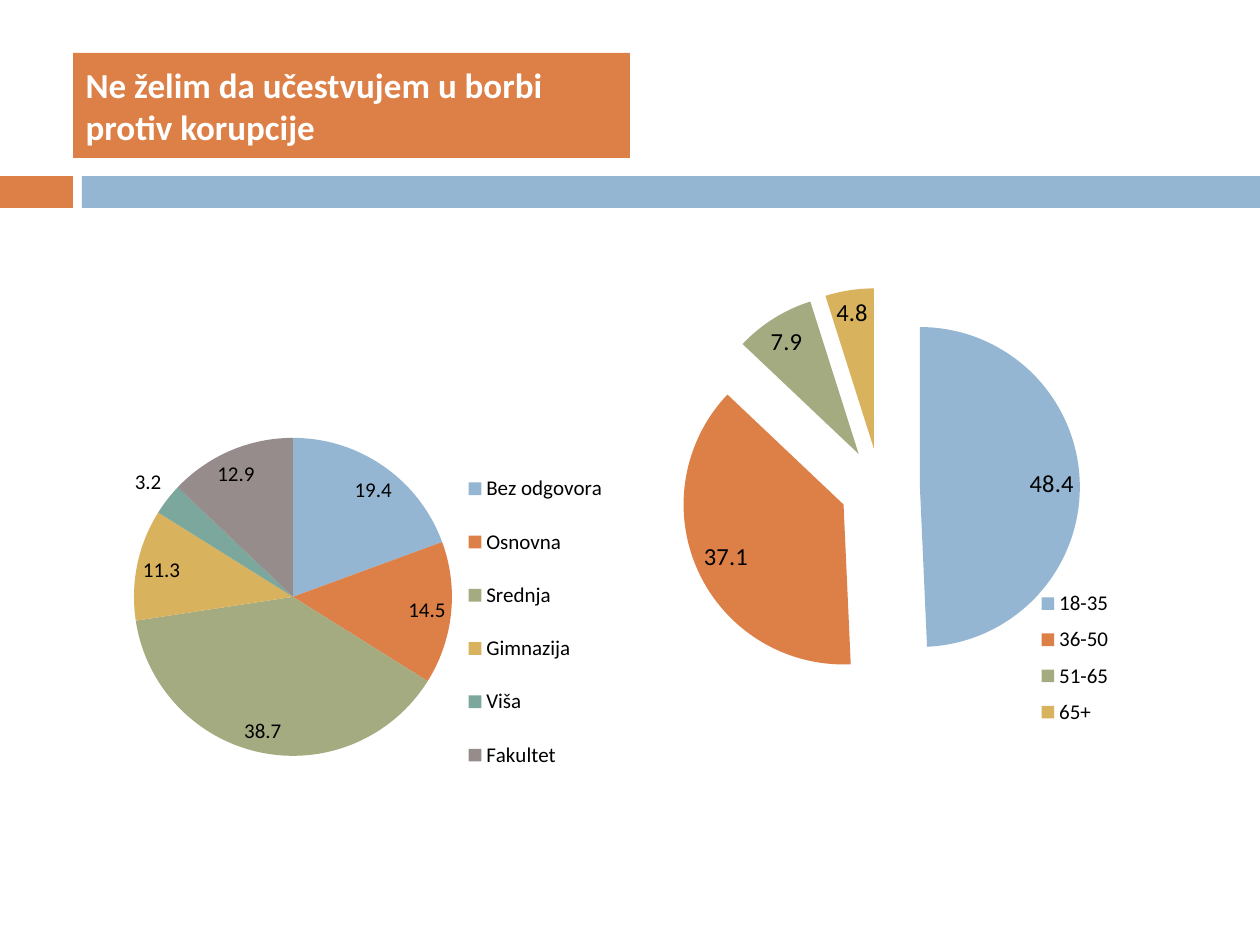
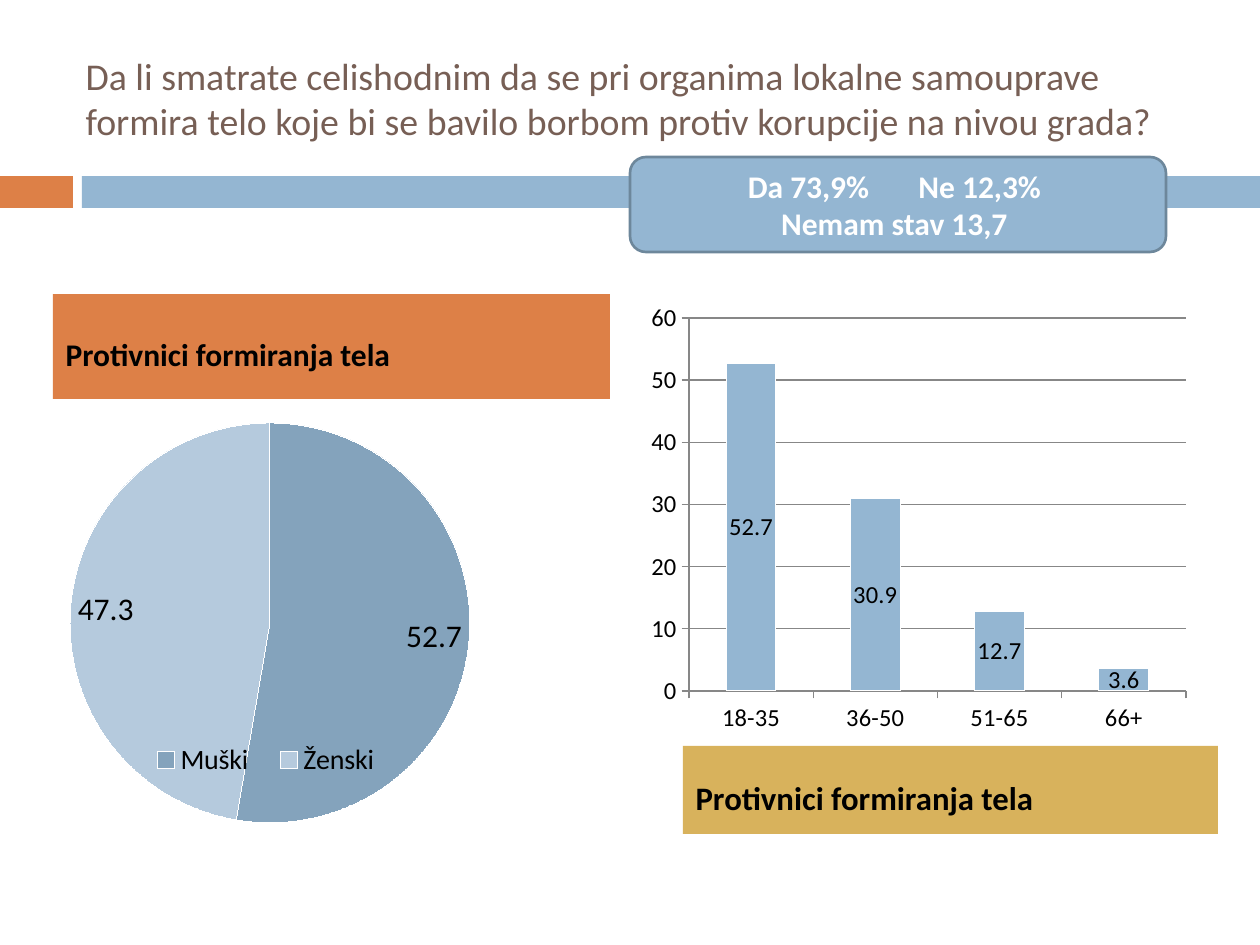
from dataclasses import dataclass
from typing import Any, Optional

from lxml import etree
from pptx import Presentation
from pptx.chart.data import CategoryChartData
from pptx.dml.color import RGBColor
from pptx.enum.chart import XL_CHART_TYPE, XL_LABEL_POSITION, XL_LEGEND_POSITION, XL_TICK_MARK
from pptx.enum.shapes import MSO_SHAPE
from pptx.enum.text import MSO_ANCHOR, MSO_AUTO_SIZE, PP_ALIGN
from pptx.oxml.ns import qn
from pptx.util import Pt

PIE = XL_CHART_TYPE.PIE
COLUMN = XL_CHART_TYPE.COLUMN_STACKED
BEST = XL_LABEL_POSITION.BEST_FIT
CENTER = XL_LABEL_POSITION.CENTER
RIGHT = XL_LEGEND_POSITION.RIGHT
OUTSIDE = XL_TICK_MARK.OUTSIDE
RECT = MSO_SHAPE.RECTANGLE
ROUND = MSO_SHAPE.ROUNDED_RECTANGLE
MIDDLE = MSO_ANCHOR.MIDDLE
NO_FIT = MSO_AUTO_SIZE.NONE
ALIGN_L = PP_ALIGN.LEFT
ALIGN_C = PP_ALIGN.CENTER

SCALE = 914400 / 126
FONT = "Calibri"
WHITE, BLACK, BROWN, GRAY = "FFFFFF", "000000", "775F55", "878787"
BLUE, ORANGE, GREEN, GOLD = "94B6D2", "DD8047", "A5AB81", "D8B25C"
TEAL, MAUVE, EDGE = "7BA79D", "968C8C", "6D879B"
STEEL, PALE = "84A3BC", "B5CADD"
THEME = [BLUE, ORANGE, GREEN, GOLD, TEAL, MAUVE]


@dataclass
class Box:
    x: int
    y: int
    w: int
    h: int


@dataclass
class Graph:
    kind: Any
    box: Box
    plot: Box
    cats: list[str]
    vals: list[float]
    hues: list[str]
    size: int
    key: Optional[Box] = None
    key_size: int = 12
    burst: int = 0
    rim: bool = False


@dataclass
class Label:
    slot: int
    box: Box
    hue: str
    size: float


def px(n: int) -> int:
    return round(n * SCALE)


def rgb(code: str) -> RGBColor:
    return RGBColor.from_string(code)


def paint(shape: Any, hue: str) -> None:
    shape.fill.solid()
    shape.fill.fore_color.rgb = rgb(hue)


def place(shape: Any, box: Box) -> None:
    shape.left, shape.top = px(box.x), px(box.y)
    shape.width, shape.height = px(box.w), px(box.h)


def draw(slide: Any, kind: Any, box: Box, hue: str, edge: str = "") -> Any:
    shape = slide.shapes.add_shape(kind, px(box.x), px(box.y), px(box.w), px(box.h))
    shape.shadow.inherit = False
    paint(shape, hue)
    if edge:
        shape.line.color.rgb = rgb(edge)
        shape.line.width = Pt(1.5)
    else:
        shape.line.fill.background()
    return shape


def write(shape: Any, lines: list[str], *, size: float, hue: str = WHITE, bold: bool = True,
          align: Any = ALIGN_L, before: int = 0, top: int = 6, gap: int = 0) -> None:
    frame = shape.text_frame
    frame.word_wrap = True
    frame.auto_size = NO_FIT
    frame.vertical_anchor = MIDDLE
    frame.margin_top = px(top)
    for i, line in enumerate(lines):
        para = frame.add_paragraph() if i else frame.paragraphs[0]
        para.alignment = align
        para.space_before = Pt(before)
        for j, part in enumerate(line.split("|")):
            if j:
                space = para.add_run()
                space.text = " "
                space.font.size = Pt(size)
                space.font.name = FONT
                space.font.bold = bold
                space.font._element.set("spc", str(gap * 100))
            run = para.add_run()
            run.text = part
            run.font.size = Pt(size)
            run.font.name = FONT
            run.font.bold = bold
            run.font.color.rgb = rgb(hue)


def layout(spot: Box, box: Box, inner: bool = False) -> Any:
    root = etree.Element(qn("c:layout"))
    node = etree.SubElement(root, qn("c:manualLayout"))
    parts = {"layoutTarget": "inner"} if inner else {}
    parts |= {"xMode": "edge", "yMode": "edge",
              "x": (spot.x - box.x) / box.w, "y": (spot.y - box.y) / box.h,
              "w": spot.w / box.w, "h": spot.h / box.h}
    for name, value in parts.items():
        etree.SubElement(node, qn("c:" + name)).set("val", str(value))
    return root


def clear(node: Any) -> None:
    for old in node.findall(qn("c:layout")):
        node.remove(old)


def style_axes(chart: Any) -> None:
    for axis in (chart.category_axis, chart.value_axis):
        axis.major_tick_mark = OUTSIDE
        axis.format.line.color.rgb = rgb(GRAY)
    axis = chart.value_axis
    axis.minimum_scale, axis.maximum_scale, axis.major_unit = 0, 60, 10
    axis.has_major_gridlines = True
    axis.major_gridlines.format.line.color.rgb = rgb(GRAY)


def plot(slide: Any, graph: Graph) -> None:
    box = graph.box
    data = CategoryChartData(number_format="General")
    data.categories = graph.cats
    data.add_series("Series 1", graph.vals)
    chart = slide.shapes.add_chart(graph.kind, px(box.x), px(box.y),
                                   px(box.w), px(box.h), data).chart
    chart.has_title = False
    chart.font.name = FONT
    chart.font.size = Pt(graph.size)
    chart.font.color.rgb = rgb(BLACK)
    body = chart.plots[0]
    series = body.series[0]
    pie = graph.kind == PIE
    body.vary_by_categories = pie
    if pie:
        forms = [series.points[i].format for i in range(len(graph.vals))]
    else:
        forms = [series.format]
        body.gap_width, body.overlap = 150, 100
        style_axes(chart)
    for form, hue in zip(forms, graph.hues):
        paint(form, hue)
        if graph.rim:
            form.line.color.rgb = rgb(WHITE)
        else:
            form.line.fill.background()
    body.has_data_labels = True
    labels = body.data_labels
    labels.show_value = True
    labels.position = BEST if pie else CENTER
    labels.font.size = Pt(graph.size)
    labels.font.name = FONT
    labels.font.color.rgb = rgb(BLACK)
    if graph.burst:
        node = etree.Element(qn("c:explosion"), val=str(graph.burst))
        series._element.find(qn("c:tx")).addnext(node)
    area = chart._chartSpace.chart.plotArea
    clear(area)
    area.insert(0, layout(graph.plot, box, inner=True))
    chart.has_legend = graph.key is not None
    if graph.key:
        key = chart.legend
        key.position = RIGHT
        key.include_in_layout = False
        key.font.size = Pt(graph.key_size)
        key.font.name = FONT
        key.font.color.rgb = rgb(BLACK)
        clear(key._element)
        key._element.find(qn("c:legendPos")).addnext(layout(graph.key, box))


SCHOOL = Graph(PIE, Box(84, 336, 536, 494), Box(134, 396, 318, 402),
               ["Bez odgovora ", "Osnovna ", "Srednja", "Gimnazija", "Viša", "Fakultet"],
               [19.4, 14.5, 38.7, 11.3, 3.2, 12.9], THEME, 12, Box(463, 448, 150, 348))
AGE = Graph(PIE, Box(661, 199, 525, 543), Box(680, 288, 400, 400),
            ["18-35", "36-50", "51-65", "65+"], [48.4, 37.1, 7.9, 4.8], THEME, 14,
            Box(1030, 580, 90, 156), burst=25)
GENDER = Graph(PIE, Box(53, 399, 557, 449), Box(70, 423, 400, 400),
               ["Muški", "Ženski"], [52.7, 47.3], [STEEL, PALE], 18,
               Box(135, 738, 262, 44), key_size=16, rim=True)
AGAINST = Graph(COLUMN, Box(640, 294, 557, 449), Box(689, 318, 497, 373),
                ["18-35", "36-50", "51-65", "66+"], [52.7, 30.9, 12.7, 3.6], [BLUE], 14,
                rim=True)
LABELS = [Label(1, Box(53, 294, 557, 105), ORANGE, 18),
          Label(3, Box(683, 746, 535, 88), GOLD, 18.7)]


def add_bands(deck: Any, slide: Any) -> None:
    tree = deck.slide_master.shapes.element
    bands = [(Box(0, 176, 73, 32), ORANGE), (Box(82, 176, 1178, 32), BLUE)]
    for i, (box, hue) in enumerate(bands):
        band = draw(slide, RECT, box, hue)
        band.element.nvSpPr.cNvPr.set("id", str(100 + i))
        tree.insert(2 + i, band.element)


def add_refusal(deck: Any) -> None:
    slide = deck.slides.add_slide(deck.slide_layouts[5])
    add_bands(deck, slide)
    title = slide.shapes.title
    place(title, Box(73, 53, 557, 105))
    paint(title, ORANGE)
    write(title, ["Ne želim da učestvujem u borbi protiv korupcije"], size=20, before=7)
    plot(slide, SCHOOL)
    plot(slide, AGE)


def add_council(deck: Any) -> None:
    slide = deck.slides.add_slide(deck.slide_layouts[4])
    holds = {hold.placeholder_format.idx: hold for hold in slide.placeholders}
    for slot in (2, 4):
        node = holds[slot].element
        node.getparent().remove(node)
    title = slide.shapes.title
    place(title, Box(73, 38, 1124, 120))
    write(title, ["Da li smatrate celishodnim da se pri organima lokalne samouprave formira "
                  "telo koje bi se bavilo borbom protiv korupcije na nivou grada?"],
          size=21.6, hue=BROWN, bold=False)
    plot(slide, GENDER)
    plot(slide, AGAINST)
    for label in LABELS:
        hold = holds[label.slot]
        place(hold, label.box)
        paint(hold, label.hue)
        write(hold, ["Protivnici formiranja tela"], size=label.size, hue=BLACK, top=22)
    result = draw(slide, ROUND, Box(630, 157, 536, 95), BLUE, EDGE)
    write(result, ["Da 73,9%|Ne 12,3% ", "Nemam stav 13,7 "], size=18, align=ALIGN_C, gap=24)


def main() -> None:
    deck = Presentation()
    deck.slide_width, deck.slide_height = px(1260), px(945)
    add_refusal(deck)
    add_council(deck)
    deck.save("out.pptx")


if __name__ == "__main__":
    main()
